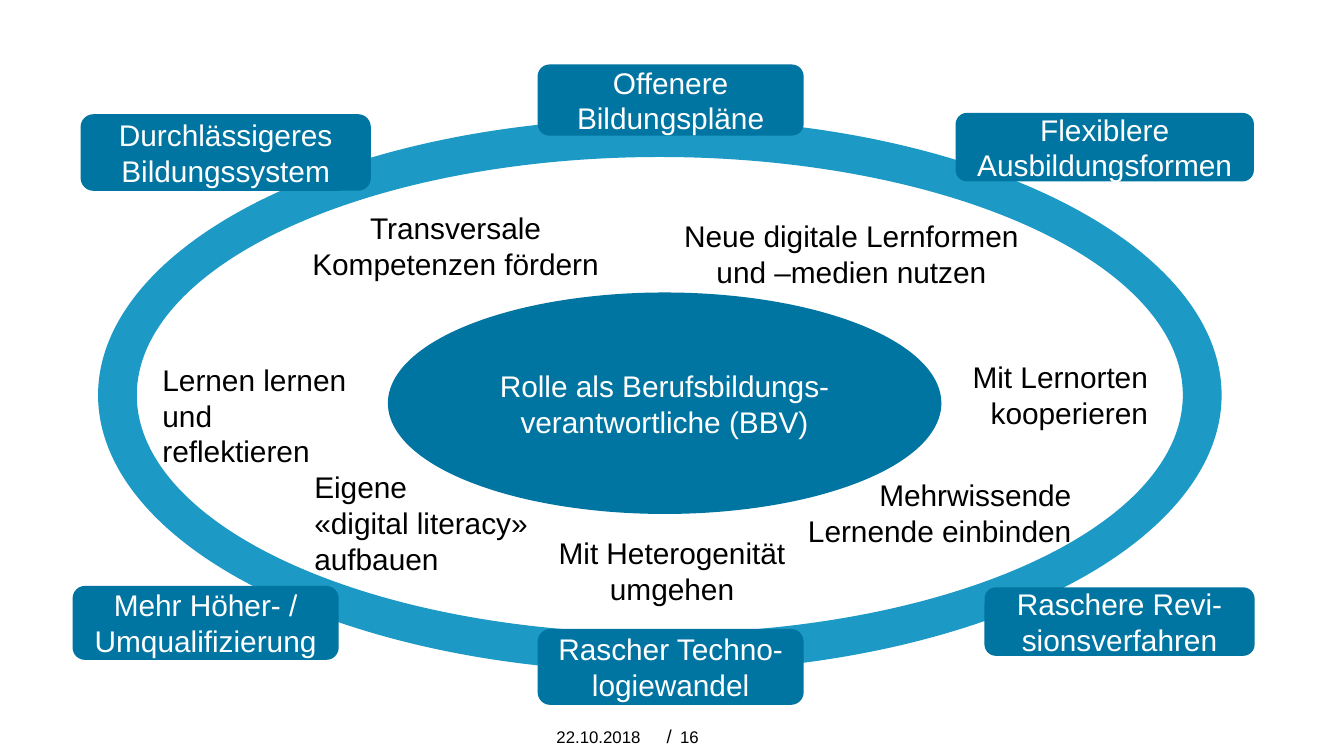
"""Build a slide on the role of vocational trainers inside a ring of system trends."""
from pptx import Presentation
from pptx import util as u
from pptx.dml.color import RGBColor
from pptx.enum import shapes, text

CELL = 0.1
COLUMNS, ROWS = 100, 56.25
BLUE, RING, WHITE, BLACK = "0075A1", "1C99C5", "FFFFFF", "000000"
LEFT, CENTER, RIGHT = text.PP_ALIGN.LEFT, text.PP_ALIGN.CENTER, text.PP_ALIGN.RIGHT

RING_AREA = (7.3, 8.8, 83.6, 41.2)
ROLE = ("Rolle als Berufsbildungs-verantwortliche (BBV)", (29, 21.9, 40.9, 16.2))
TRENDS = [
    ("Durchlässigeres Bildungssystem", (6, 8.5, 21.6, 5.7)),
    ("Mehr Höher- / Umqualifizierung", (5.4, 43.6, 19.8, 5.5)),
    ("Flexiblere Ausbildungsformen", (71.1, 8.4, 22.2, 5.1)),
    ("Raschere Revi-sionsverfahren", (73.25, 43.7, 20.1, 5.1)),
    ("Offenere Bildungspläne", (40, 4.8, 19.8, 5.3)),
    ("Rascher Techno-logiewandel", (40, 46.8, 19.8, 5.65)),
]
TASKS = [
    ("Mehrwissende Lernende einbinden", (57.7, 35, 23, 6.3), RIGHT),
    ("Transversale Kompetenzen fördern", (21.2, 15.1, 25.4, 6.3), CENTER),
    ("Neue digitale Lernformen und –medien nutzen", (49.8, 15.7, 27.1, 6.3), CENTER),
    ("Lernen lernen und reflektieren", (11.1, 26.4, 17.2, 6.3), LEFT),
    ("Mit Lernorten kooperieren", (69.2, 26.2, 17.2, 6.3), RIGHT),
    ("Mit Heterogenität\numgehen", (39.4, 39.3, 21.2, 6.3), CENTER),
    ("Eigene\n«digital literacy» aufbauen", (22.4, 34.4, 19.8, 8.9), LEFT),
]
FOOTER = [("22.10.2018", (41.4, 54, 7.9, 1.3)), ("16", (50.6, 54, 3.2, 1.3))]
SLASH = ("/", (49.6, 53.9, 0.4, 1.7))


def color(value):
    return RGBColor.from_string(value)


def place(area):
    return [u.Inches(cells * CELL) for cells in area]


def write(box, words, *, size=16, ink=BLACK, align=LEFT, anchor=text.MSO_ANCHOR.TOP,
          wrap=True, grow=False, insets=None, spacing=None):
    frame = box.text_frame
    frame.text = words
    frame.word_wrap = wrap
    frame.vertical_anchor = anchor
    if grow:
        frame.auto_size = text.MSO_AUTO_SIZE.SHAPE_TO_FIT_TEXT
    if insets:
        side, end = map(u.Inches, insets)
        frame.margin_left = frame.margin_right = side
        frame.margin_top = frame.margin_bottom = end
    for para in frame.paragraphs:
        para.alignment = align
        if spacing:
            para.line_spacing = u.Pt(spacing)
        for span in para.runs:
            span.font.name = "Arial"
            span.font.size = u.Pt(size)
            span.font.color.rgb = color(ink)


def add_shape(page, kind, area, fill, words=None):
    shape = page.shapes.add_shape(kind, *place(area))
    shape.shadow.inherit = False
    shape.fill.solid()
    shape.fill.fore_color.rgb = color(fill)
    shape.line.fill.background()
    if words:
        write(shape, words, ink=WHITE, align=CENTER, anchor=text.MSO_ANCHOR.MIDDLE)
    return shape


def add_text(page, words, area, **style):
    write(page.shapes.add_textbox(*place(area)), words, **style)


def main():
    deck = Presentation()
    deck.slide_width, deck.slide_height = place((COLUMNS, ROWS))
    page = deck.slides.add_slide(deck.slide_layouts[6])

    add_text(page, *SLASH, size=10, wrap=False, grow=True, insets=(0, 0))
    ring = add_shape(page, shapes.MSO_SHAPE.DONUT, RING_AREA, RING)
    ring.adjustments[0] = 0.07
    for words, area in TRENDS:
        add_shape(page, shapes.MSO_SHAPE.ROUNDED_RECTANGLE, area, BLUE, words)
    for words, area, align in TASKS:
        add_text(page, words, area, align=align, grow=True)
    words, area = ROLE
    role = add_shape(page, shapes.MSO_SHAPE.OVAL, area, BLUE, words)
    role.line.color.rgb = color(BLUE)
    role.line.width = u.Pt(2)
    for words, area in FOOTER:
        add_text(page, words, area, size=9, anchor=text.MSO_ANCHOR.MIDDLE,
                 insets=(0, 0.03), spacing=13)

    deck.save("out.pptx")


if __name__ == "__main__":
    main()
